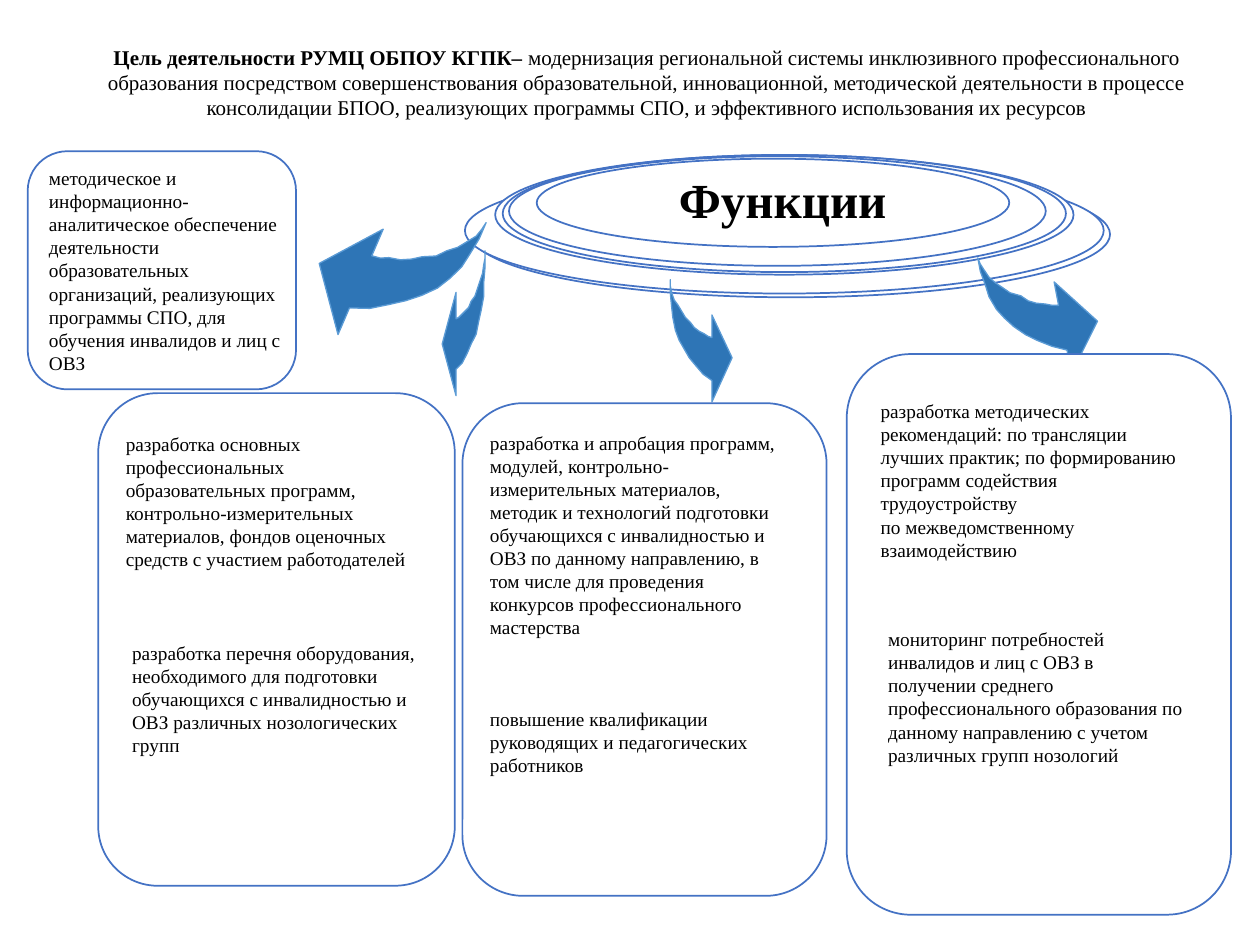
from dataclasses import dataclass

from pptx import Presentation
from pptx.dml.color import RGBColor
from pptx.enum.shapes import MSO_SHAPE
from pptx.enum.text import MSO_ANCHOR, MSO_AUTO_SIZE, PP_ALIGN
from pptx.util import Pt

PX = 9144  # EMU per px, 100 px to the inch


@dataclass(frozen=True)
class Theme:
    font: str = "Times New Roman"
    text: str = "000000"
    paper: str = "FFFFFF"
    outline: str = "4472C4"
    arrow: str = "2E75B6"
    arrow_line: str = "5B9BD5"
    body: int = 11
    goal: int = 12
    heading: int = 28


@dataclass(frozen=True)
class Box:
    left: int
    top: int
    width: int
    height: int

    def emu(self) -> tuple:
        return tuple(v * PX for v in (self.left, self.top, self.width, self.height))


@dataclass(frozen=True)
class Arrow:
    box: Box
    mirrored: bool = False
    rotation: float = 0


@dataclass(frozen=True)
class Note:
    box: Box
    paragraphs: tuple
    inset_top: int = 5


THEME = Theme()

RINGS = (
    Box(374, 136, 507, 100), Box(369, 133, 507, 100), Box(393, 123, 459, 95),
    Box(399, 123, 447, 93), Box(404, 124, 426, 87), Box(426, 126, 375, 70),
)

# Curved arrow as percentages of its frame, from the tail tip along the outer edge
ARROW_OUTLINE = (
    (0, 0), (0, 11), (2, 22), (4, 31), (8, 41), (14, 49), (22, 57), (31, 64),
    (41, 70), (53, 77), (67, 82), (67, 100), (100, 64), (67, 29), (67, 47),
    (61, 46), (55, 44), (47, 42), (39, 39), (33, 35), (24, 31), (18, 26),
    (12, 21), (7, 16), (3, 10), (1, 5),
)
ARROWS = (
    Arrow(Box(256, 150, 109, 128), mirrored=True, rotation=23.2),
    Arrow(Box(351, 199, 34, 115), mirrored=True),
    Arrow(Box(532, 222, 49, 97)),
    Arrow(Box(785, 196, 84, 104), rotation=349.3),
)

SIDE_CARD = Box(22, 120, 213, 189)
CARDS = (Box(78, 312, 283, 391), Box(367, 320, 289, 391), Box(672, 281, 305, 445))

NOTES = (
    Note(Box(29, 127, 206, 177), (
        "методическое и информационно-аналитическое обеспечение деятельности "
        "образовательных организаций, реализующих программы СПО, для обучения "
        "инвалидов и лиц с ОВЗ",)),
    Note(Box(90, 338, 256, 121), (
        "разработка основных профессиональных образовательных программ, "
        "контрольно-измерительных материалов, фондов оценочных средств "
        "с участием работодателей",)),
    Note(Box(379, 337, 250, 177), (
        "разработка и апробация программ, модулей, контрольно-измерительных "
        "материалов, методик и технологий подготовки обучающихся с инвалидностью "
        "и ОВЗ по данному направлению, в том числе для проведения конкурсов "
        "профессионального мастерства",)),
    Note(Box(689, 312, 268, 140), (
        "разработка методических рекомендаций: по трансляции лучших практик; "
        "по формированию программ содействия трудоустройству",
        "по межведомственному взаимодействию")),
    Note(Box(95, 504, 256, 103), (
        "разработка перечня оборудования, необходимого для подготовки обучающихся "
        "с инвалидностью и ОВЗ различных нозологических групп",)),
    Note(Box(379, 538, 256, 121), (
        "повышение квалификации руководящих и педагогических работников",),
        inset_top=23),
    Note(Box(695, 493, 256, 121), (
        "мониторинг потребностей инвалидов и лиц с ОВЗ в получении среднего "
        "профессионального образования по данному направлению с учетом различных "
        "групп нозологий",)),
)

GOAL_LEAD = "Цель деятельности РУМЦ ОБПОУ КГПК– "
GOAL = (
    "модернизация региональной системы инклюзивного профессионального образования "
    "посредством совершенствования образовательной, инновационной, методической "
    "деятельности в процессе консолидации БПОО, реализующих программы СПО, "
    "и эффективного использования их ресурсов"
)


def add_text(p, text: str, *, size: int = THEME.body, bold: bool = False) -> None:
    r = p.add_run()
    r.text = text
    r.font.name = THEME.font
    r.font.size = Pt(size)
    r.font.bold = bold
    r.font.color.rgb = RGBColor.from_string(THEME.text)


def paint(sp, fill: str, line: str, width: float) -> None:
    sp.shadow.inherit = False
    sp.fill.solid()
    sp.fill.fore_color.rgb = RGBColor.from_string(fill)
    sp.line.color.rgb = RGBColor.from_string(line)
    sp.line.width = Pt(width)


def add_outlined(shapes, kind: MSO_SHAPE, box: Box) -> None:
    sp = shapes.add_shape(kind, *box.emu())
    paint(sp, THEME.paper, THEME.outline, 1)


def add_arrow(shapes, arrow: Arrow) -> None:
    box = arrow.box
    points = [
        (box.left + box.width * (100 - x if arrow.mirrored else x) / 100,
         box.top + box.height * y / 100)
        for x, y in ARROW_OUTLINE
    ]
    builder = shapes.build_freeform(*points[0], scale=PX)
    builder.add_line_segments(points[1:], close=True)
    sp = builder.convert_to_shape()
    sp.rotation = arrow.rotation
    paint(sp, THEME.arrow, THEME.arrow_line, 0.75)


def add_note(shapes, note: Note, **text_format) -> None:
    tf = shapes.add_textbox(*note.box.emu()).text_frame
    tf.word_wrap = True
    tf.margin_top = note.inset_top * PX
    for i, text in enumerate(note.paragraphs):
        p = tf.add_paragraph() if i else tf.paragraphs[0]
        add_text(p, text, **text_format)


def add_goal(title) -> None:
    title.left, title.top, title.width, title.height = Box(50, 30, 927, 96).emu()
    tf = title.text_frame
    tf.word_wrap = True
    tf.auto_size = MSO_AUTO_SIZE.NONE
    tf.vertical_anchor = MSO_ANCHOR.TOP
    p = tf.paragraphs[0]
    p.alignment = PP_ALIGN.CENTER
    add_text(p, GOAL_LEAD, size=THEME.goal, bold=True)
    add_text(p, GOAL, size=THEME.goal)


def main() -> None:
    prs = Presentation()
    prs.slide_width, prs.slide_height = 1000 * PX, 750 * PX
    s = prs.slides.add_slide(prs.slide_layouts[5])
    add_goal(s.shapes.title)

    rings = s.shapes.add_group_shape()
    for box in RINGS:
        add_outlined(rings.shapes, MSO_SHAPE.OVAL, box)
    add_outlined(s.shapes, MSO_SHAPE.ROUNDED_RECTANGLE, SIDE_CARD)
    for arrow in ARROWS:
        add_arrow(s.shapes, arrow)
    for box in CARDS:
        add_outlined(s.shapes, MSO_SHAPE.ROUNDED_RECTANGLE, box)
    for note in NOTES:
        add_note(s.shapes, note)
    heading = Note(Box(529, 130, 212, 57), ("Функции",))
    add_note(s.shapes, heading, size=THEME.heading, bold=True)

    prs.save("out.pptx")


if __name__ == "__main__":
    main()
